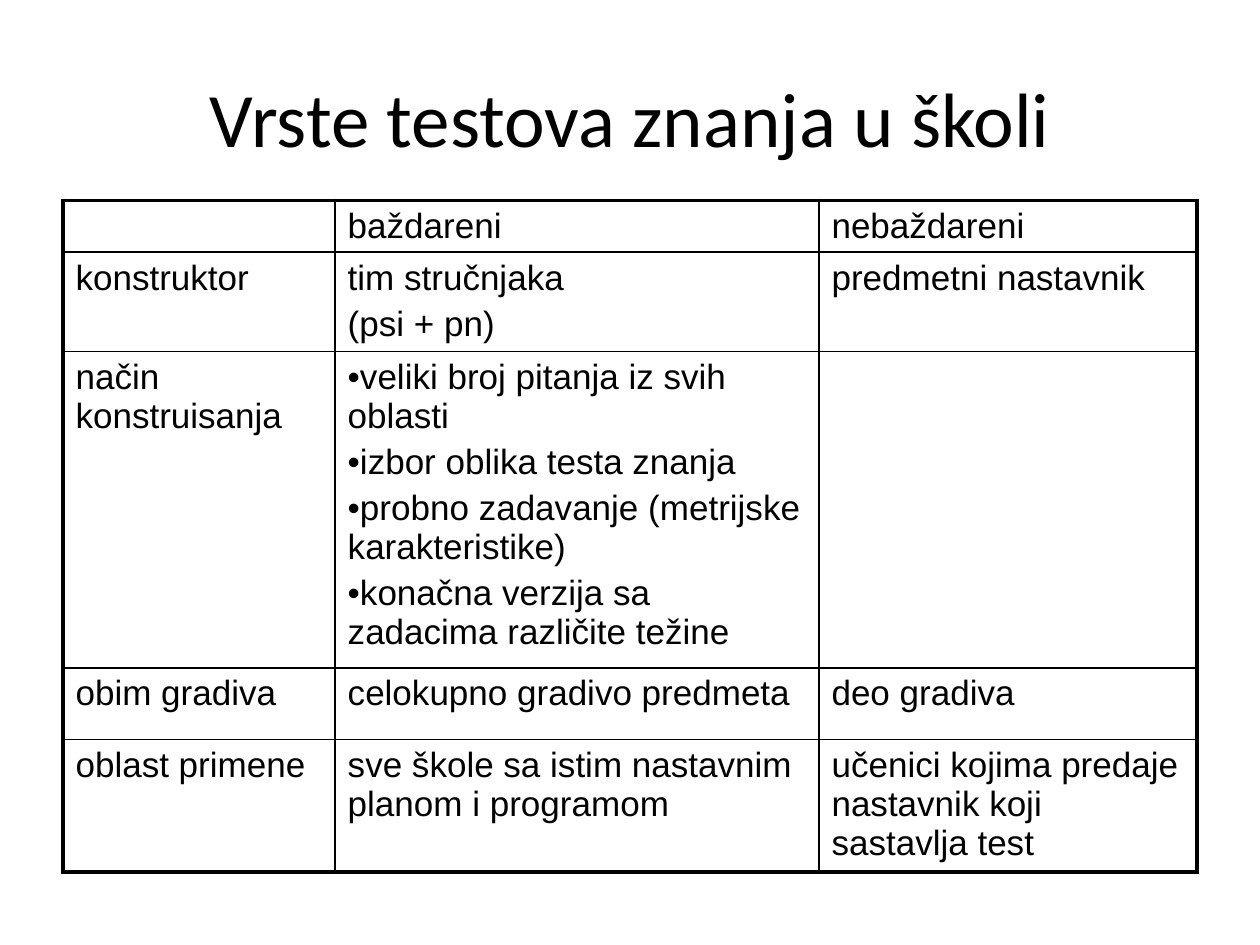
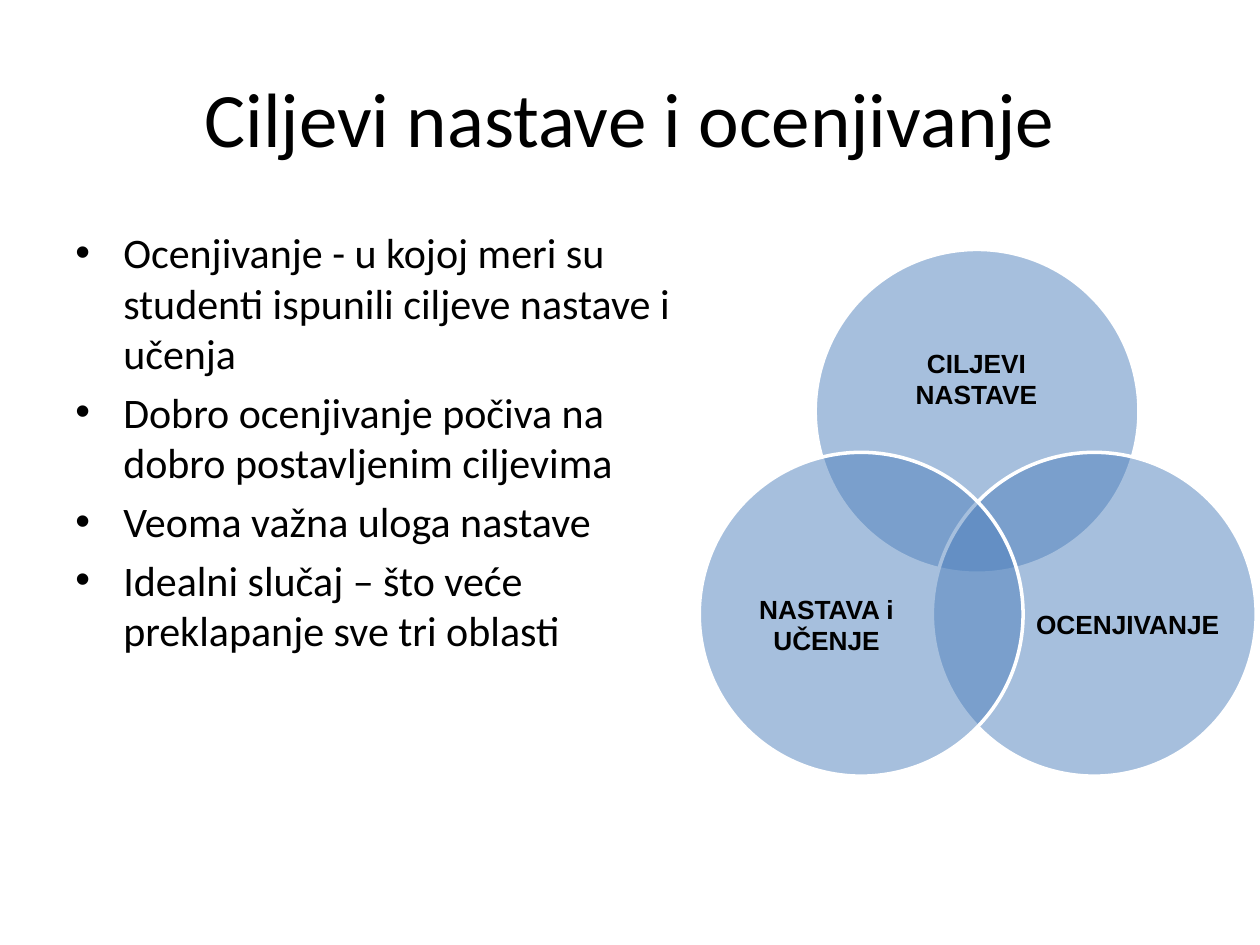
from dataclasses import dataclass

from pptx import Presentation
from pptx.dml.color import RGBColor as RGB
from pptx.enum.shapes import MSO_SHAPE as Shape
from pptx.enum.text import MSO_ANCHOR as Anchor, PP_ALIGN as Align
from pptx.oxml import parse_xml
from pptx.oxml.ns import nsdecls, qn
from pptx.util import Inches, Pt


@dataclass(frozen=True)
class Theme:
    ink: RGB = RGB(0, 0, 0)
    paper: RGB = RGB(255, 255, 255)
    blue: RGB = RGB(0x4F, 0x81, 0xBD)
    head: str = "Calibri"
    plain: str = "Arial"
    title: int = 44
    body: int = 24
    cell: int = 20
    label: int = 15
    thick: float = 2.25
    thin: float = 1


T = Theme()
TITLE = (0.5, 0.3, 9, 1.25)
GRID = (0.5, 1.59, 9, 5.33)
LIST = (0.5, 1.75, 5.08, 4.95)
VENN = (5.55, 1.98)

COLS = (2.16, 3.84, 3)
ROWS = (0.41, 0.79, 2.51, 0.57, 1.05)
CELLS = (
    ("", "baždareni", "nebaždareni"),
    ("konstruktor", "tim stručnjaka\n(psi + pn)", "predmetni nastavnik"),
    ("način konstruisanja",
     "veliki broj pitanja iz svih oblasti\nizbor oblika testa znanja\n"
     "probno zadavanje (metrijske karakteristike)\n"
     "konačna verzija sa zadacima različite težine", ""),
    ("obim gradiva", "celokupno gradivo predmeta", "deo gradiva"),
    ("oblast primene", "sve škole sa istim nastavnim planom i programom",
     "učenici kojima predaje nastavnik koji sastavlja test"),
)
LISTED = (2, 1)  # row and column of the cell with bullets

POINTS = (
    "Ocenjivanje - u kojoj meri su studenti ispunili ciljeve nastave i učenja\n"
    "Dobro ocenjivanje počiva na dobro postavljenim ciljevima\n"
    "Veoma važna uloga nastave\n"
    "Idealni slučaj – što veće preklapanje sve tri oblasti"
)
SIZE = 2.57
# circle offset, label offset and label size, all relative to the diagram
RINGS = (
    ("CILJEVI\nNASTAVE", (0.92, 0), (1.26, 0.45, 1.88, 1.15)),
    ("OCENJIVANJE", (1.85, 1.61), (2.63, 2.27, 1.54, 1.41)),
    ("NASTAVA i\nUČENJE", (0, 1.61), (0.24, 2.27, 1.54, 1.41)),
)


def inch(box):
    return [Inches(v) for v in box]


def style(item, values):
    for name, value in values.items():
        setattr(item, name, value)


def write(frame, text, face, size, bold=False, align=Align.LEFT, gap=0):
    """Fill a frame, one paragraph a line; gap is a share of the type size."""
    frame.word_wrap = True
    frame.text = text
    for par in frame.paragraphs:
        style(par, {"alignment": align, "space_before": Pt(size * gap)})
        style(par.font, {"name": face, "size": Pt(size), "bold": bold})
        par.font.color.rgb = T.ink


def bullet(frame, hang=0):
    for par in frame.paragraphs:
        props = par._p.get_or_add_pPr()
        props.set("marL", str(Inches(hang)))
        props.set("indent", str(-Inches(hang)))
        props.append(parse_xml(f'<a:buFont {nsdecls("a")} typeface="Arial"/>'))
        props.append(parse_xml(f'<a:buChar {nsdecls("a")} char="•"/>'))


def start(deck, text):
    slide = deck.slides.add_slide(deck.slide_layouts[5])
    title = slide.shapes.title
    style(title, dict(zip(("left", "top", "width", "height"), inch(TITLE))))
    write(title.text_frame, text, T.head, T.title, align=Align.CENTER)
    title.text_frame.vertical_anchor = Anchor.MIDDLE
    return slide


def border(cell, row, col):
    """Rule a cell, with a thick line where it meets the table's edge."""
    edges = {"L": col == 0, "R": col == len(COLS) - 1,
             "T": row == 0, "B": row == len(ROWS) - 1}
    props = cell._tc.get_or_add_tcPr()
    for i, (side, outer) in enumerate(edges.items()):
        width = Pt(T.thick if outer else T.thin)
        props.insert(i, parse_xml(
            f'<a:ln{side} {nsdecls("a")} w="{width}"><a:solidFill>'
            f'<a:srgbClr val="{T.ink}"/></a:solidFill></a:ln{side}>'))


def grid(slide, box):
    table = slide.shapes.add_table(len(ROWS), len(COLS), *inch(box)).table
    style(table, {"first_row": False, "horz_banding": False})
    for col, width in zip(table.columns, COLS):
        col.width = Inches(width)
    for row, height in zip(table.rows, ROWS):
        row.height = Inches(height)
    for r, line in enumerate(CELLS):
        for c, text in enumerate(line):
            cell = table.cell(r, c)
            write(cell.text_frame, text, T.plain, T.cell, gap=0.2)
            if (r, c) == LISTED:
                bullet(cell.text_frame)
            cell.fill.background()
            border(cell, r, c)


def points(slide, box):
    frame = slide.shapes.add_textbox(*inch(box)).text_frame
    write(frame, POINTS, T.head, T.body, gap=0.2)
    bullet(frame, 0.38)


def ring(slide, x, y):
    disc = slide.shapes.add_shape(Shape.OVAL, *inch((x, y, SIZE, SIZE)))
    disc.shadow.inherit = False
    disc.fill.solid()
    disc.fill.fore_color.rgb = T.blue
    tint = disc._element.spPr.find(qn("a:solidFill"))[0]
    tint.append(parse_xml(f'<a:alpha {nsdecls("a")} val="50000"/>'))
    disc.line.color.rgb = T.paper
    disc.line.width = Pt(2)


def venn(slide, left, top):
    for text, (x, y), (dx, dy, width, height) in RINGS:
        ring(slide, left + x, top + y)
        label = slide.shapes.add_textbox(
            *inch((left + dx, top + dy, width, height)))
        frame = label.text_frame
        write(frame, text, T.plain, T.label, True, Align.CENTER)
        style(frame, {"margin_left": 0, "margin_right": 0, "margin_top": 0,
                      "margin_bottom": 0, "vertical_anchor": Anchor.MIDDLE})


def main():
    deck = Presentation()
    style(deck, {"slide_width": Inches(10), "slide_height": Inches(7.5)})
    grid(start(deck, "Vrste testova znanja u školi"), GRID)
    goals = start(deck, "Ciljevi nastave i ocenjivanje")
    points(goals, LIST)
    venn(goals, *VENN)
    deck.save("out.pptx")


if __name__ == "__main__":
    main()
